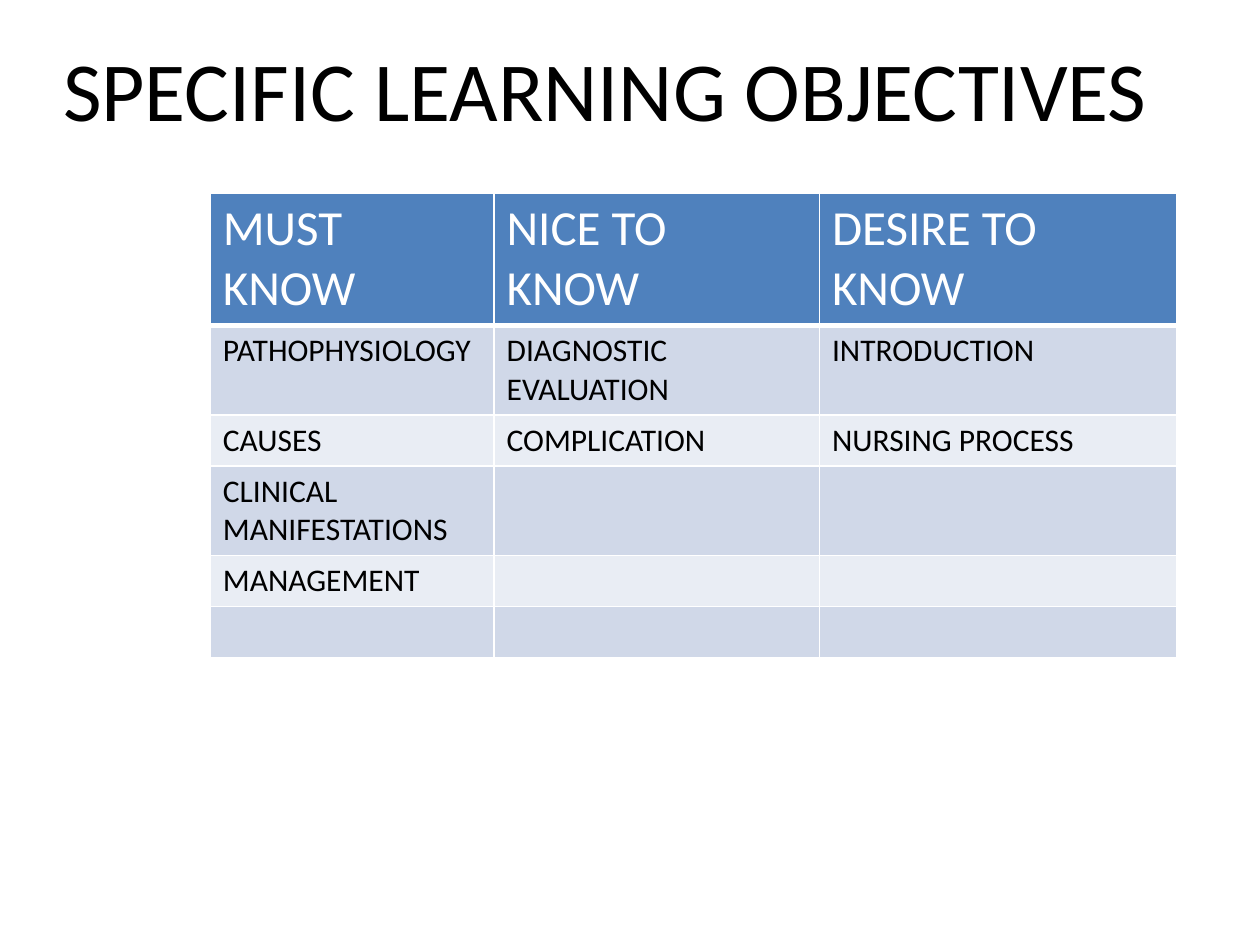
from lxml import etree
from pptx import Presentation
from pptx.dml import color
from pptx.enum import text
from pptx.oxml import ns
from pptx.util import Cm, Pt

theme = {
    "font": "Calibri", "title": 48, "head": 28, "body": 18,
    "black": "000000", "white": "FFFFFF",
    "head_fill": "4F81BD", "bands": ["D0D8E8", "E9EDF4"],
}
rows = [
    ["MUST KNOW", "NICE TO KNOW", "DESIRE TO KNOW"],
    ["PATHOPHYSIOLOGY", "DIAGNOSTIC EVALUATION", "INTRODUCTION"],
    ["CAUSES", "COMPLICATION", "NURSING PROCESS"],
    ["CLINICAL MANIFESTATIONS", "", ""],
    ["MANAGEMENT", "", ""],
    ["", "", ""],
]
col_widths = [5.72, 6.56, 7.2]
row_height = 1.03


def style_text(p, size, rgb):
    for name, value in {"name": theme["font"], "size": Pt(size), "bold": False}.items():
        setattr(p.font, name, value)
    p.font.color.rgb = color.RGBColor.from_string(rgb)


def add_border(cell, side, width):
    ln = etree.SubElement(cell._tc.get_or_add_tcPr(), ns.qn(f"a:ln{side}"), w=str(Pt(width)))
    fill = etree.SubElement(ln, ns.qn("a:solidFill"))
    etree.SubElement(fill, ns.qn("a:srgbClr"), val=theme["white"])


prs = Presentation()
prs.slide_width, prs.slide_height = Cm(25.4), Cm(19.05)
s = prs.slides.add_slide(prs.slide_layouts[5])

title = s.shapes.title
for name, value in {"left": 1.27, "top": 0.76, "width": 22.86, "height": 2.06}.items():
    setattr(title, name, Cm(value))
tf = title.text_frame
tf.text = "SPECIFIC LEARNING OBJECTIVES"
for name, value in {
    "margin_left": 0, "margin_top": 0, "margin_right": 0, "margin_bottom": 0,
    "word_wrap": True, "auto_size": text.MSO_AUTO_SIZE.NONE,
    "vertical_anchor": text.MSO_ANCHOR.TOP,
}.items():
    setattr(tf, name, value)
p = tf.paragraphs[0]
p.alignment = text.PP_ALIGN.LEFT
style_text(p, theme["title"], theme["black"])

table = s.shapes.add_table(
    len(rows), len(col_widths), Cm(4.24), Cm(3.89),
    Cm(sum(col_widths)), Cm(row_height * len(rows)),
).table
for col, width in zip(table.columns, col_widths):
    col.width = Cm(width)

for i, labels in enumerate(rows):
    table.rows[i].height = Cm(row_height)
    head = i == 0
    size = theme["head"] if head else theme["body"]
    rgb = theme["white"] if head else theme["black"]
    fill = theme["head_fill"] if head else theme["bands"][(i - 1) % 2]
    for j, label in enumerate(labels):
        cell = table.cell(i, j)
        cell.text = label
        style_text(cell.text_frame.paragraphs[0], size, rgb)
        for side in "LRTB":
            add_border(cell, side, 3 if head and side == "B" else 1)
        cell.fill.solid()
        cell.fill.fore_color.rgb = color.RGBColor.from_string(fill)

prs.save("out.pptx")
